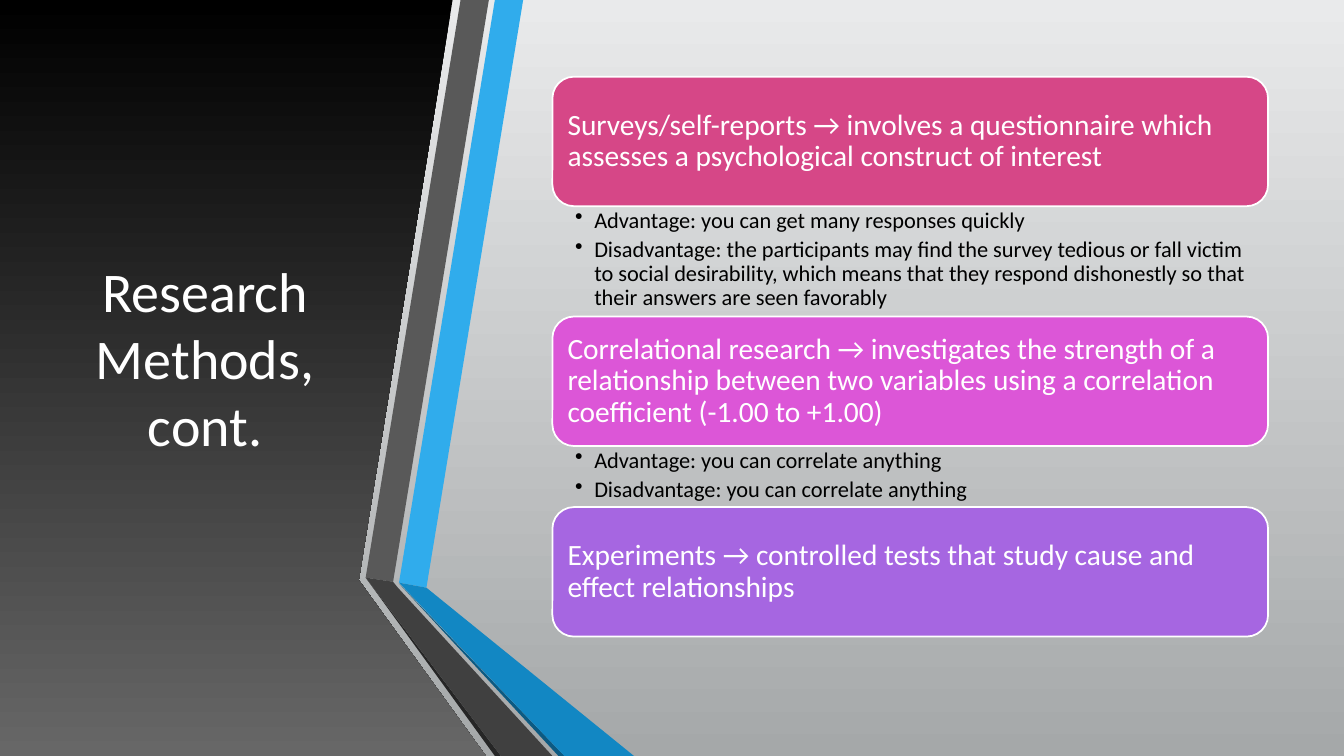
import pptx
import pptx.dml.color
import pptx.enum.shapes
import pptx.enum.text
import pptx.oxml
import pptx.oxml.ns
import pptx.util

# Content
TITLE = "Research Methods, cont."
# (heading, card colour, bullets, height of the bullet area)
METHODS = [
    ("Surveys/self-reports → involves a questionnaire which assesses a psychological construct of interest",
     "D64787",
     ["Advantage: you can get many responses quickly",
      "Disadvantage: the participants may find the survey tedious or fall victim to social desirability, "
      "which means that they respond dishonestly so that their answers are seen favorably"],
     78.8),
    ("Correlational research → investigates the strength of a relationship between two variables "
     "using a correlation coefficient (-1.00 to +1.00)",
     "DC56D7",
     ["Advantage: you can correlate anything", "Disadvantage: you can correlate anything"],
     43.6),
    ("Experiments → controlled tests that study cause and effect relationships", "A666E1", [], 0),
]

# Theme
THEME = {
    "font": "Calibri",
    "title_size": 40, "card_size": 21, "bullet_size": 16,
    "light": "FFFFFF", "dark": "000000",
    "backdrop": ("E9EAEB", "A5A8A9"),
    "panel": ("000000", "676767"),
}

# Geometry, in points
PAGE_WIDTH, PAGE_HEIGHT = 960, 540
TITLE_BOX = (42.5, 54, 208, 401.8)
CARD_LEFT, CARD_TOP, CARD_WIDTH, CARD_HEIGHT = 394.6, 54.8, 511.2, 92.5
PANEL = [(0, 0), (323.3, 0), (256.3, 414.4), (347, 540), (0, 540)]
RIBBONS = [
    ("30ACEC", [(285, 416.2), (304.6, 419.8), (373.7, 0), (353.5, 0)]),
    ("595959", [(349.2, 0), (329, 0), (261.2, 412.6), (280.8, 415.6)]),
    ("262626", [(261.2, 412.6), (353.5, 540), (357.8, 540)]),
    ("0C5A82", [(285, 416.8), (398.9, 540), (403.2, 540)]),
    ("1287C3", [(285, 416.2), (403.2, 540), (452.9, 540), (304.6, 419.8)]),
    ("404040", [(394.6, 540), (284.2, 419.8), (280.8, 415.6), (261.2, 412.6), (357.8, 540)]),
]


def points(values):
    return [pptx.util.Pt(value) for value in values]


def colour(code):
    return pptx.dml.color.RGBColor.from_string(code)


def apply(target, values):
    for name, value in values.items():
        setattr(target, name, value)


def fill_solid(fill, code):
    fill.solid()
    fill.fore_color.rgb = colour(code)


def fill_down(fill, codes):
    fill.gradient()
    fill.gradient_angle = 270
    for stop, code in zip(fill.gradient_stops, codes):
        stop.color.rgb = colour(code)


def add_outline(page, corners):
    start, *others = [points(corner) for corner in corners]
    builder = page.shapes.build_freeform(*start)
    builder.add_line_segments(others, close=True)
    shape = builder.convert_to_shape()
    shape.shadow.inherit = False
    shape.line.fill.background()
    return shape


def add_bullet(para):
    properties = para._p.get_or_add_pPr()
    indent = pptx.util.Pt(13.7)
    properties.set("marL", str(indent))
    properties.set("indent", str(-indent))
    bullet = pptx.oxml.parse_xml(f'<a:buChar {pptx.oxml.ns.nsdecls("a")} char="•"/>')
    properties.append(bullet)


def write(box, lines, size, code, anchor, insets, align="LEFT", spacing=1, after=0, bullets=False):
    frame = box.text_frame
    left, top, right, bottom = points(insets)
    apply(frame, {
        "word_wrap": True,
        "vertical_anchor": pptx.enum.text.MSO_ANCHOR[anchor],
        "margin_left": left, "margin_top": top, "margin_right": right, "margin_bottom": bottom,
    })
    for index, line in enumerate(lines):
        para = frame.add_paragraph() if index else frame.paragraphs[0]
        apply(para, {
            "alignment": pptx.enum.text.PP_ALIGN[align],
            "line_spacing": spacing,
            "space_after": pptx.util.Pt(after),
        })
        if bullets:
            add_bullet(para)
        span = para.add_run()
        span.text = line
        apply(span.font, {"name": THEME["font"], "size": pptx.util.Pt(size)})
        span.font.color.rgb = colour(code)


def add_card(page, top, heading, code):
    card = page.shapes.add_shape(
        pptx.enum.shapes.MSO_SHAPE.ROUNDED_RECTANGLE,
        *points((CARD_LEFT, top, CARD_WIDTH, CARD_HEIGHT)))
    card.shadow.inherit = False
    fill_solid(card.fill, code)
    card.line.color.rgb = colour(THEME["light"])
    card.line.width = pptx.util.Pt(1.25)
    write(card, [heading], THEME["card_size"], THEME["light"], "MIDDLE", (6.3,) * 4, spacing=0.9)


def main():
    deck = pptx.Presentation()
    apply(deck, {"slide_width": pptx.util.Pt(PAGE_WIDTH), "slide_height": pptx.util.Pt(PAGE_HEIGHT)})
    page = deck.slides.add_slide(deck.slide_layouts[6])
    fill_down(page.background.fill, THEME["backdrop"])

    # Dark panel with the title
    fill_down(add_outline(page, PANEL).fill, THEME["panel"])
    title = page.shapes.add_textbox(*points(TITLE_BOX))
    write(title, [TITLE], THEME["title_size"], THEME["light"], "MIDDLE", (7.2, 3.6, 7.2, 3.6), "CENTER")

    # Folded ribbons
    for code, corners in RIBBONS:
        fill_solid(add_outline(page, corners).fill, code)

    # Cards, each followed by its bullets
    top = CARD_TOP
    for heading, code, bullets, height in METHODS:
        add_card(page, top, heading, code)
        top += CARD_HEIGHT
        if bullets:
            box = page.shapes.add_textbox(*points((CARD_LEFT, top, CARD_WIDTH, height)))
            write(box, bullets, THEME["bullet_size"], THEME["dark"], "TOP",
                  (16.2, 2, 11.4, 2), spacing=0.9, after=3.6, bullets=True)
        top += height

    deck.save("out.pptx")


if __name__ == "__main__":
    main()
